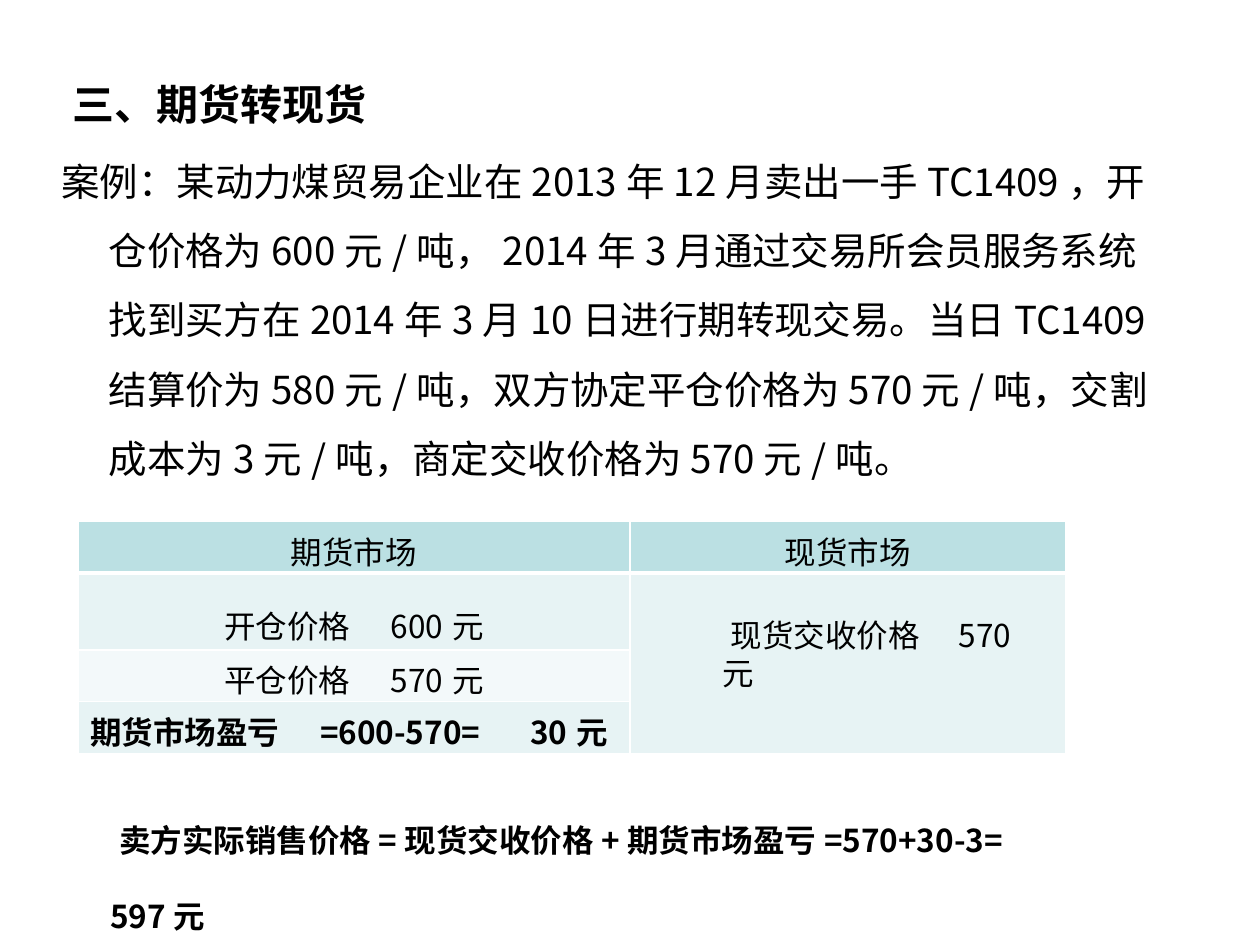
from lxml.etree import SubElement
from pptx import Presentation
from pptx.dml.color import RGBColor
from pptx.enum.text import MSO_ANCHOR, PP_ALIGN
from pptx.oxml.ns import qn
from pptx.util import Pt

COLORS = {
    "text": "000000",
    "header": "BBE0E3",
    "band": "E7F3F4",
    "light": "F3F9FA",
    "border": "FFFFFF",
}
CJK_FONT = "Noto Sans CJK SC"


class CaseSlide:
    def __init__(self, slide):
        self.slide = slide

    def format_text(self, frame, text, size=18, bold=False, font=CJK_FONT,
                    align=PP_ALIGN.LEFT, line_spacing=1, indent=0, hanging=0):
        frame.word_wrap = True
        paragraph = frame.paragraphs[0]
        paragraph.text = text
        paragraph.alignment = align
        paragraph.line_spacing = line_spacing
        paragraph.space_before = Pt(0)
        properties = paragraph._p.get_or_add_pPr()
        properties.set("marL", str(Pt(hanging)))
        properties.set("indent", str(Pt(indent - hanging)))
        style = paragraph.font
        style.size = Pt(size)
        style.bold = bold
        style.color.rgb = RGBColor.from_string(COLORS["text"])
        style.name = font
        SubElement(style._rPr, qn("a:ea"), typeface=CJK_FONT)

    def title(self, text, left, top, width, height):
        heading = self.slide.shapes.title
        heading.left, heading.top = Pt(left), Pt(top)
        heading.width, heading.height = Pt(width), Pt(height)
        heading.text_frame.vertical_anchor = MSO_ANCHOR.MIDDLE
        self.format_text(heading.text_frame, text, size=24, bold=True)

    def text(self, text, left, top, width, height, **style):
        box = self.slide.shapes.add_textbox(Pt(left), Pt(top), Pt(width), Pt(height))
        self.format_text(box.text_frame, text, **style)

    def table(self, left, top, widths, heights):
        frame = self.slide.shapes.add_table(
            len(heights), len(widths), Pt(left), Pt(top),
            Pt(sum(widths)), Pt(sum(heights)))
        for column, width in zip(frame.table.columns, widths):
            column.width = Pt(width)
        for row, height in zip(frame.table.rows, heights):
            row.height = Pt(height)
        return frame.table

    def cell(self, cell, fill, text="", bottom=1, **style):
        properties = cell._tc.get_or_add_tcPr()
        for side, weight in (("L", 1), ("R", 1), ("T", 1), ("B", bottom)):
            line = SubElement(properties, qn(f"a:ln{side}"), w=str(Pt(weight)))
            solid = SubElement(line, qn("a:solidFill"))
            SubElement(solid, qn("a:srgbClr"), val=COLORS["border"])
        cell.fill.solid()
        cell.fill.fore_color.rgb = RGBColor.from_string(COLORS[fill])
        if text:
            self.format_text(cell.text_frame, text, **style)


def main():
    presentation = Presentation()
    presentation.slide_width, presentation.slide_height = Pt(720), Pt(540)
    page = CaseSlide(presentation.slides.add_slide(presentation.slide_layouts[5]))

    page.title("三、期货转现货", 34, 28, 648, 62)
    page.text(
        "案例：某动力煤贸易企业在2013年12月卖出一手TC1409，开仓价格为600元/吨，"
        "2014年3月通过交易所会员服务系统找到买方在2014年3月10日进行期转现交易。"
        "当日TC1409结算价为580元/吨，双方协定平仓价格为570元/吨，"
        "交割成本为3元/吨，商定交收价格为570元/吨。",
        28, 73.5, 648, 208, size=22, line_spacing=1.5, hanging=27)
    page.text("卖方实际销售价格=现货交收价格+期货市场盈亏=570+30-3=　597元",
              56, 444, 556.5, 51, bold=True, line_spacing=2, indent=5)

    markets = page.table(44.5, 298, widths=(315.5, 249), heights=(29.5, 44, 29.5, 29.5))
    for column, market in enumerate(("期货市场", "现货市场")):
        page.cell(markets.cell(0, column), "header", market, bottom=3,
                  font="Arial", align=PP_ALIGN.CENTER)
    futures_rows = (
        ("band", "开仓价格　600元", {"align": PP_ALIGN.CENTER, "line_spacing": 1.5}),
        ("light", "平仓价格　570元", {"align": PP_ALIGN.CENTER}),
        ("band", "期货市场盈亏　=600-570=　30元", {"bold": True}),
    )
    for row, (fill, entry, style) in enumerate(futures_rows, start=1):
        page.cell(markets.cell(row, 0), fill, entry, **style)
        page.cell(markets.cell(row, 1), "band")
    markets.cell(1, 1).merge(markets.cell(3, 1))

    page.text("现货交收价格　570元", 405.5, 348.5, 190, 29, indent=5)
    presentation.save("out.pptx")


if __name__ == "__main__":
    main()
